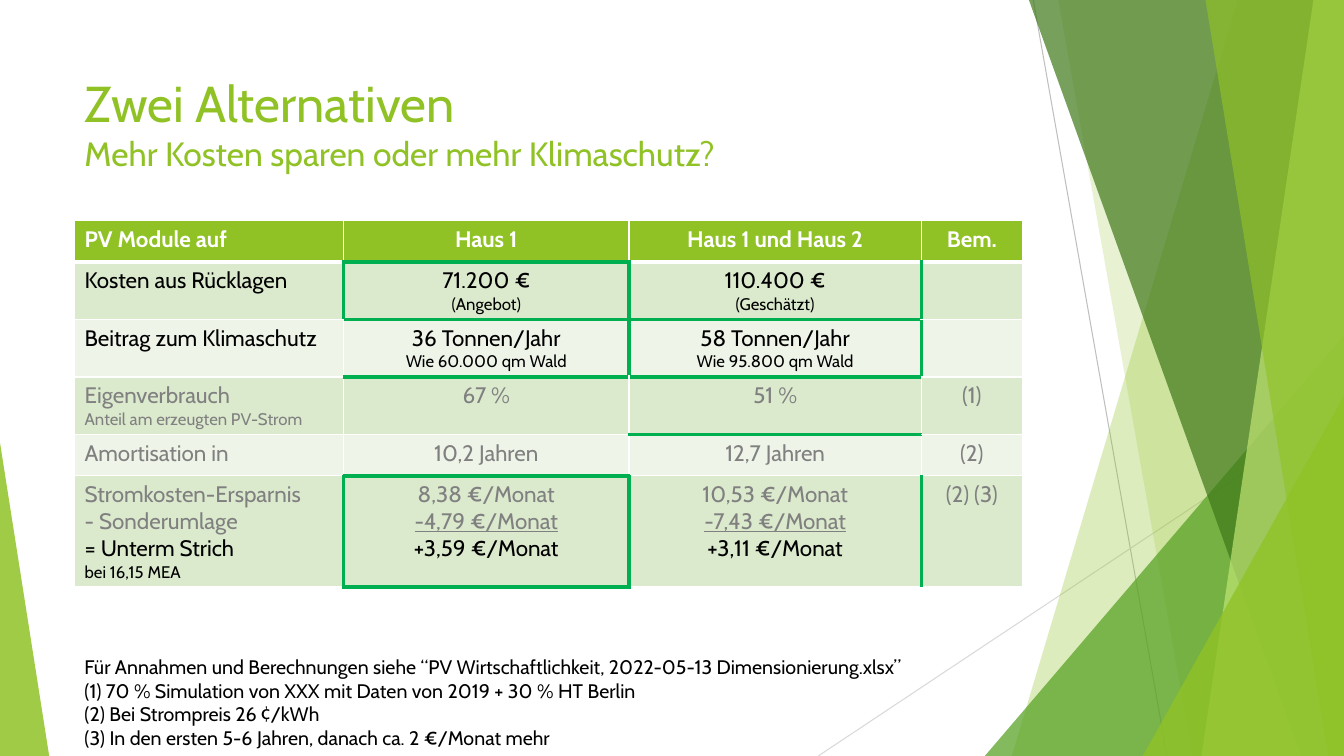
from lxml import etree
from pptx import Presentation
from pptx.dml.color import RGBColor
from pptx.enum.shapes import MSO_CONNECTOR, MSO_SHAPE
from pptx.enum.text import MSO_ANCHOR, PP_ALIGN
from pptx.oxml.ns import qn
from pptx.util import Cm, Pt

STRAIGHT = MSO_CONNECTOR.STRAIGHT
TRIANGLE = MSO_SHAPE.ISOSCELES_TRIANGLE
TOP = MSO_ANCHOR.TOP
LEFT, CENTER = PP_ALIGN.LEFT, PP_ALIGN.CENTER

FONT = "Cabin"
WIDTH, HEIGHT = 33.87, 19.05  # slide size in cm
COLORS = {
    "lime": "90C226", "leaf": "54A021", "forest": "3F7819", "pale": "C0E474",
    "frame": "00B050", "band": "DBE9CD", "light_band": "EEF4E8",
    "white": "FFFFFF", "black": "000000", "muted": "808080",
    "line": "BFBFBF", "light_line": "D9D9D9",
}
# Text styles: size, colour, bold, underline
STYLES = {
    "title": (36, "lime", False, False),
    "subtitle": (24, "lime", False, False),
    "header": (16, "white", True, False),
    "main": (16, "black", False, False),
    "small": (12, "black", False, False),
    "muted": (16, "muted", False, False),
    "muted_small": (12, "muted", False, False),
    "subtracted": (16, "muted", False, True),
    "note": (14, "black", False, False),
}

# Background, back to front; facets run from a top x to a bottom x
# and fill everything to the right edge
BACKGROUND = [
    ("facet", (31.19, 25.5), "lime", 30),
    ("facet", (26.67, 30.05), "lime", 20),
    ("triangle", (24.82, 8.46, 9.05, 10.59, 1), "leaf", 72),
    ("facet", (25.93, 32.79), "forest", 70),
    ("facet", (33.1, 30.28), "pale", 70),
    ("facet", (30.38, 33.48), "lime", 65),
    ("triangle", (28.8, 9.98, 5.07, 9.07, 1), "lime", 80),
    ("triangle", (0, 11.15, 1.24, 7.9, 0), "lime", 85),
]

COLUMN_WIDTHS = [6.78, 7.19, 7.37, 2.54]
ROW_HEIGHTS = [1.04, 1.45, 1.45, 1.45, 1.04, 2.74]
# Each cell is a list of (text, style) lines
COMPARISON = [
    [[("PV Module auf", "header")], [("Haus 1", "header")],
     [("Haus 1 und Haus 2", "header")], [("Bem.", "header")]],
    [[("Kosten aus Rücklagen", "main")],
     [("71.200 €", "main"), ("(Angebot)", "small")],
     [("110.400 €", "main"), ("(Geschätzt)", "small")], []],
    [[("Beitrag zum Klimaschutz", "main")],
     [("36 Tonnen/Jahr", "main"), ("Wie 60.000 qm Wald", "small")],
     [("58 Tonnen/Jahr", "main"), ("Wie 95.800 qm Wald", "small")], []],
    [[("Eigenverbrauch", "muted"), ("Anteil am erzeugten PV-Strom", "muted_small")],
     [("67 %", "muted")], [("51 %", "muted")], [("(1)", "muted")]],
    [[("Amortisation in", "muted")], [("10,2 Jahren", "muted")],
     [("12,7 Jahren", "muted")], [("(2)", "muted")]],
    [[("Stromkosten-Ersparnis", "muted"), ("- Sonderumlage", "muted"),
      ("= Unterm Strich", "main"), ("bei 16,15 MEA", "small")],
     [("8,38 €/Monat", "muted"), ("-4,79 €/Monat", "subtracted"),
      ("+3,59 €/Monat", "main")],
     [("10,53 €/Monat", "muted"), ("-7,43 €/Monat", "subtracted"),
      ("+3,11 €/Monat", "main")],
     [("(2) (3)", "muted")]],
]
# Green edges as (row, column): above a cell, and left of a cell
FRAME_ABOVE = {(1, 1), (2, 1), (2, 2), (3, 1), (3, 2), (4, 2), (5, 1), (6, 1)}
FRAME_LEFT = {(1, 1), (1, 2), (1, 3), (2, 2), (2, 3), (5, 1), (5, 2), (5, 3)}

FOOTNOTES = [
    "Für Annahmen und Berechnungen siehe “PV Wirtschaftlichkeit, 2022-05-13 Dimensionierung.xlsx”",
    "(1) 70 % Simulation von XXX mit Daten von 2019 + 30 % HT Berlin",
    "(2) Bei Strompreis 26 ¢/kWh",
    "(3) In den ersten 5-6 Jahren, danach ca. 2 €/Monat mehr",
]


def rgb(color):
    return RGBColor.from_string(COLORS[color])


def write_lines(frame, lines, align=LEFT):
    for index, (text, style) in enumerate(lines):
        paragraph = frame.paragraphs[0] if index == 0 else frame.add_paragraph()
        paragraph.text = text
        paragraph.alignment = align
        font = paragraph.font
        size, color, font.bold, font.underline = STYLES[style]
        font.name = FONT
        font.size = Pt(size)
        font.color.rgb = rgb(color)


def add_text(slide, left, top, width, height, lines, wrap):
    frame = slide.shapes.add_textbox(Cm(left), Cm(top), Cm(width), Cm(height)).text_frame
    frame.word_wrap = wrap
    frame.vertical_anchor = TOP
    write_lines(frame, lines)


def add_thin_line(slide, x1, y1, x2, y2, color):
    line = slide.shapes.add_connector(STRAIGHT, Cm(x1), Cm(y1), Cm(x2), Cm(y2))
    line.line.color.rgb = rgb(color)
    line.line.width = Pt(0.75)
    etree.SubElement(line._element.spPr, qn("a:effectLst"))


def paint(shape, color, opacity):
    shape.shadow.inherit = False
    shape.line.fill.background()
    shape.fill.solid()
    shape.fill.fore_color.rgb = rgb(color)
    tint = shape._element.spPr.find(qn("a:solidFill"))[0]
    etree.SubElement(tint, qn("a:alpha"), val=str(opacity * 1000))


def add_facet(slide, top_x, bottom_x):
    outline = slide.shapes.build_freeform(Cm(top_x), 0)
    corners = [(WIDTH, 0), (WIDTH, HEIGHT), (bottom_x, HEIGHT)]
    outline.add_line_segments([(Cm(x), Cm(y)) for x, y in corners], close=True)
    return outline.convert_to_shape()


def add_triangle(slide, left, top, width, height, apex):
    triangle = slide.shapes.add_shape(TRIANGLE, Cm(left), Cm(top), Cm(width), Cm(height))
    triangle.adjustments[0] = apex
    return triangle


def add_background(slide):
    add_thin_line(slide, 26.04, 0, 29.41, HEIGHT, "line")
    add_thin_line(slide, WIDTH, 10.24, 20.62, HEIGHT, "light_line")
    builders = {"facet": add_facet, "triangle": add_triangle}
    for kind, geometry, color, opacity in BACKGROUND:
        paint(builders[kind](slide, *geometry), color, opacity)


def edge_style(framed, header_rule=False):
    return ("frame" if framed else "white"), (3 if framed or header_rule else 1)


def set_borders(cell, row, column):
    edges = {
        "a:lnL": edge_style((row, column) in FRAME_LEFT),
        "a:lnR": edge_style((row, column + 1) in FRAME_LEFT),
        "a:lnT": edge_style((row, column) in FRAME_ABOVE, row == 1),
        "a:lnB": edge_style((row + 1, column) in FRAME_ABOVE, row == 0),
    }
    properties = cell._tc.get_or_add_tcPr()
    for position, (tag, (color, width)) in enumerate(edges.items()):
        border = etree.Element(qn(tag), w=str(Pt(width)))
        fill = etree.SubElement(border, qn("a:solidFill"))
        etree.SubElement(fill, qn("a:srgbClr"), val=COLORS[color])
        properties.insert(position, border)


def add_comparison(slide, left, top):
    table = slide.shapes.add_table(
        len(ROW_HEIGHTS), len(COLUMN_WIDTHS), Cm(left), Cm(top),
        Cm(sum(COLUMN_WIDTHS)), Cm(sum(ROW_HEIGHTS))).table
    for column, width in zip(table.columns, COLUMN_WIDTHS):
        column.width = Cm(width)
    for row, height in zip(table.rows, ROW_HEIGHTS):
        row.height = Cm(height)
    for r, cells in enumerate(COMPARISON):
        band = "lime" if r == 0 else ("light_band", "band")[r % 2]
        for c, lines in enumerate(cells):
            cell = table.cell(r, c)
            cell.fill.solid()
            cell.fill.fore_color.rgb = rgb(band)
            set_borders(cell, r, c)
            write_lines(cell.text_frame, lines, CENTER if c else LEFT)


def main():
    presentation = Presentation()
    presentation.slide_width, presentation.slide_height = Cm(WIDTH), Cm(HEIGHT)
    slide = presentation.slides.add_slide(presentation.slide_layouts[6])

    add_background(slide)
    # Heading
    add_text(slide, 1.88, 1.7, 23.88, 3.66,
             [("Zwei Alternativen", "title"),
              ("Mehr Kosten sparen oder mehr Klimaschutz?", "subtitle")], True)
    # Comparison of the two options
    add_comparison(slide, 1.88, 5.56)
    # Footnotes
    add_text(slide, 1.88, 16.38, 22.33, 2.64, [(note, "note") for note in FOOTNOTES], False)

    presentation.save("out.pptx")


if __name__ == "__main__":
    main()
